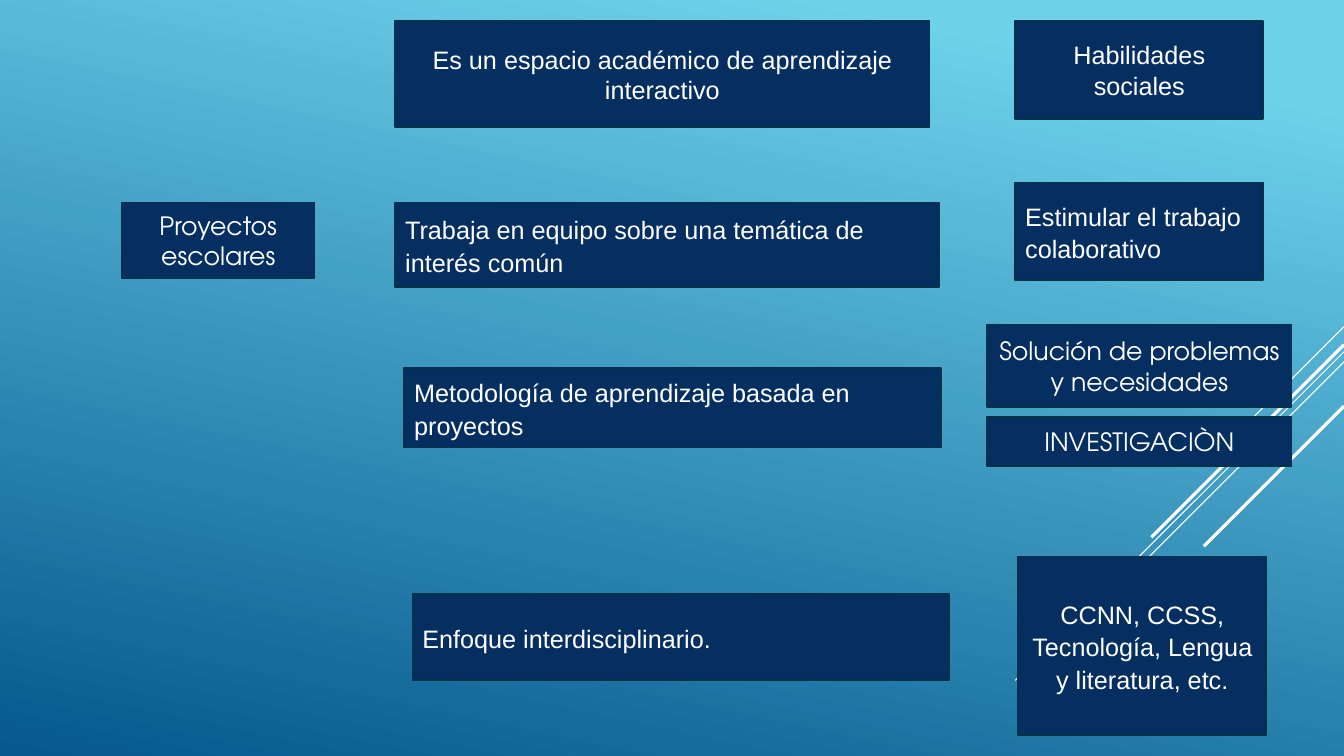
import pptx
import pptx.util
import pptx.dml.color
import pptx.enum.shapes
import pptx.enum.text
import pptx.oxml.ns
from lxml import etree

Inches = pptx.util.Inches
COLOURS = {"sky": "6ED2EB", "sea": "06588E", "navy": "052F61", "edge": "043148", "white": "FFFFFF"}
SANS, ROUND = "Arial", "TeX Gyre Adventor"
CENTER = pptx.enum.text.PP_ALIGN.CENTER
LEFT = pptx.enum.text.PP_ALIGN.LEFT


def colour(name):
    """Return the named colour."""
    return pptx.dml.color.RGBColor.from_string(COLOURS[name])


def paint_background(page):
    """Fill the page with a gradient from sky to sea."""
    fill = page.background.fill
    fill.gradient()
    fill.gradient_angle = 258
    for stop, name, position in zip(fill.gradient_stops, ("sky", "sea"), (0.1, 1)):
        stop.color.rgb = colour(name)
        stop.position = position


def add_rays(page, right):
    """Draw the diagonal rays that fall at 45 degrees from the right edge."""
    for top, reach, width in (
        (3.24, 1, 0.75),
        (3.49, 3.26, 0.75),
        (3.59, 2.07, 0.75),
        (3.42, 1.91, 2.25),
        (4.03, 1.39, 2.25),
    ):
        ray = page.shapes.add_connector(
            pptx.enum.shapes.MSO_CONNECTOR.STRAIGHT,
            Inches(right), Inches(top), Inches(right - reach), Inches(top + reach))
        ray.line.color.rgb = colour("white")
        ray.line.width = pptx.util.Pt(width)
        etree.SubElement(ray._element.spPr, pptx.oxml.ns.qn("a:effectLst"))


def add_card(page, box, text, font=SANS, align=CENTER, spaced=False):
    """Add a navy card with one paragraph of text in the given box."""
    card = page.shapes.add_shape(
        pptx.enum.shapes.MSO_SHAPE.RECTANGLE, *(Inches(length) for length in box))
    card.shadow.inherit = False
    card.fill.solid()
    card.fill.fore_color.rgb = colour("navy")
    card.line.color.rgb = colour("edge")
    card.line.width = pptx.util.Pt(1.25)
    frame = card.text_frame
    frame.word_wrap = True
    frame.vertical_anchor = pptx.enum.text.MSO_ANCHOR.MIDDLE
    para = frame.paragraphs[0]
    para.alignment = align
    if spaced:
        para.line_spacing = 1.07
        para.space_after = pptx.util.Pt(8)
    span = para.add_run()
    span.text = text
    span.font.name = font
    span.font.size = pptx.util.Pt(18)
    span.font.color.rgb = colour("white")


def add_topic(page, left, top):
    """Place the topic card."""
    add_card(page, (left, top, 1.91, 0.75), "Proyectos escolares", ROUND)


def add_features(page, left):
    """Place the column of features."""
    add_card(page, (left, 0.21, 5.3, 1.05),
             "Es un espacio académico de aprendizaje interactivo")
    for indent, top, width, height, text in (
        (0, 2.01, 5.39, 0.84, "Trabaja en equipo sobre una temática de interés común"),
        (0.09, 3.65, 5.32, 0.79, "Metodología de aprendizaje basada en proyectos"),
        (0.17, 5.89, 5.32, 0.86, "Enfoque interdisciplinario."),
    ):
        add_card(page, (left + indent, top, width, height), text, align=LEFT, spaced=True)


def add_skills(page, left):
    """Place the column of skills and subjects."""
    width, wide = 2.46, 3.02
    add_card(page, (left, 0.21, width, 0.97), "Habilidades sociales")
    add_card(page, (left, 1.81, width, 0.97), "Estimular el trabajo colaborativo",
             align=LEFT, spaced=True)
    add_card(page, (left + 0.03, 5.52, width, 1.77),
             "CCNN, CCSS, Tecnología, Lengua y literatura, etc.", spaced=True)
    wide_left = left + (width - wide) / 2
    add_card(page, (wide_left, 3.22, wide, 0.82), "Solución de problemas y necesidades", ROUND)
    add_card(page, (wide_left, 4.14, wide, 0.48), "INVESTIGACIÒN", ROUND)


def main():
    """Build and save the deck."""
    deck = pptx.Presentation()
    deck.slide_width, deck.slide_height = Inches(13.33), Inches(7.5)
    page = deck.slides.add_slide(deck.slide_layouts[6])
    paint_background(page)
    add_rays(page, 13.33)
    add_topic(page, 1.21, 2.01)
    add_features(page, 3.92)
    add_skills(page, 10.07)
    deck.save("out.pptx")


if __name__ == "__main__":
    main()
